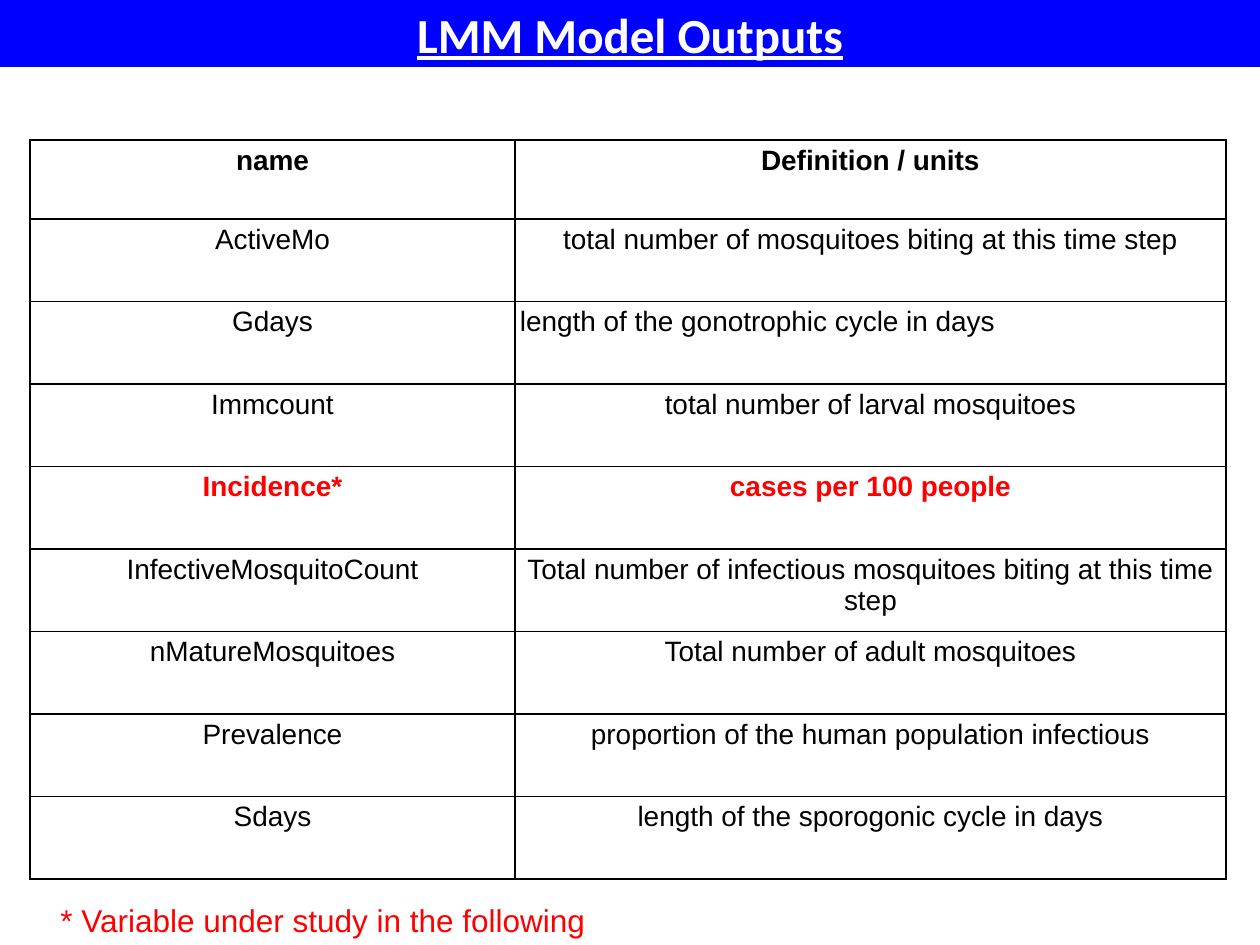
from dataclasses import dataclass

from lxml.etree import SubElement
from pptx import Presentation
from pptx.dml.color import RGBColor
from pptx.enum.shapes import MSO_SHAPE
from pptx.enum.text import MSO_ANCHOR, PP_ALIGN
from pptx.oxml.ns import qn
from pptx.util import Emu, Pt

PX_PER_INCH = 126


@dataclass(frozen=True)
class Theme:
    blue: RGBColor = RGBColor(0, 0, 255)
    red: RGBColor = RGBColor(255, 0, 0)
    black: RGBColor = RGBColor(0, 0, 0)
    white: RGBColor = RGBColor(255, 255, 255)
    title_font: str = "Calibri"
    body_font: str = "Arial"
    title_size: Pt = Pt(28)
    cell_size: Pt = Pt(16)
    note_size: Pt = Pt(18)
    border: Pt = Pt(1)


THEME = Theme()

HEADER = ("name", "Definition / units")
STUDIED = "Incidence*"
LEFT_ALIGNED = "length of the gonotrophic cycle in days"
OUTPUTS = [
    ("ActiveMo", "total number of mosquitoes biting at this time step"),
    ("Gdays", LEFT_ALIGNED),
    ("Immcount", "total number of larval mosquitoes"),
    (STUDIED, "cases per 100 people"),
    ("InfectiveMosquitoCount",
     "Total number of infectious mosquitoes biting at this time step"),
    ("nMatureMosquitoes", "Total number of adult mosquitoes"),
    ("Prevalence", "proportion of the human population infectious"),
    ("Sdays", "length of the sporogonic cycle in days"),
]


def px(n):
    return Emu(round(n * 914400 / PX_PER_INCH))


def write(tf, text, font, size, color, bold=False, underline=False,
          align=PP_ALIGN.CENTER):
    tf.text = text
    p = tf.paragraphs[0]
    p.alignment = align
    f = p.runs[0].font
    f.name, f.size, f.bold, f.underline = font, size, bold, underline
    f.color.rgb = color


def add_title_bar(s, text, width, height):
    sp = s.shapes.add_shape(MSO_SHAPE.RECTANGLE, 0, 0, px(width), px(height))
    sp.shadow.inherit = False
    sp.fill.solid()
    sp.fill.fore_color.rgb = THEME.blue
    sp.line.fill.background()
    sp.text_frame.vertical_anchor = MSO_ANCHOR.MIDDLE
    write(sp.text_frame, text, THEME.title_font, THEME.title_size,
          THEME.white, bold=True, underline=True)


def add_borders(cell):
    tc_pr = cell._tc.get_or_add_tcPr()
    for i, side in enumerate(("lnL", "lnR", "lnT", "lnB")):
        ln = tc_pr.makeelement(qn(f"a:{side}"), {"w": str(THEME.border)})
        fill = SubElement(ln, qn("a:solidFill"))
        SubElement(fill, qn("a:srgbClr"), val=str(THEME.black))
        tc_pr.insert(i, ln)


def fill_cell(cell, text, color, bold):
    cell.margin_left = cell.margin_right = px(5)
    cell.margin_top = cell.margin_bottom = px(5)
    cell.fill.background()
    add_borders(cell)
    align = PP_ALIGN.LEFT if text == LEFT_ALIGNED else PP_ALIGN.CENTER
    write(cell.text_frame, text, THEME.body_font, THEME.cell_size, color,
          bold=bold, align=align)


def add_output_table(s, x, y, col_widths, header_height, body_height):
    rows = [HEADER, *OUTPUTS]
    table = s.shapes.add_table(
        len(rows), len(HEADER), px(x), px(y),
        px(sum(col_widths)), px(header_height + body_height)).table
    table.first_row = table.horz_banding = False
    for column, width in zip(table.columns, col_widths):
        column.width = px(width)
    for i, values in enumerate(rows):
        table.rows[i].height = (
            px(body_height / len(OUTPUTS)) if i else px(header_height))
        studied = values[0] == STUDIED
        color = THEME.red if studied else THEME.black
        for cell, text in zip(table.rows[i].cells, values):
            fill_cell(cell, text, color, bold=studied or i == 0)


def add_note(s, text, x, y, w, h):
    tf = s.shapes.add_textbox(px(x), px(y), px(w), px(h)).text_frame
    tf.word_wrap = True
    write(tf, text, THEME.body_font, THEME.note_size, THEME.red,
          align=PP_ALIGN.LEFT)


def main():
    prs = Presentation()
    prs.slide_width, prs.slide_height = px(1260), px(945)
    s = prs.slides.add_slide(prs.slide_layouts[6])
    add_output_table(s, 30, 140, (485, 711), 79, 660)
    add_note(s, "* Variable under study in the following", 48, 895, 626, 50)
    add_title_bar(s, "LMM Model Outputs", 1260, 67)
    prs.save("out.pptx")


if __name__ == "__main__":
    main()
